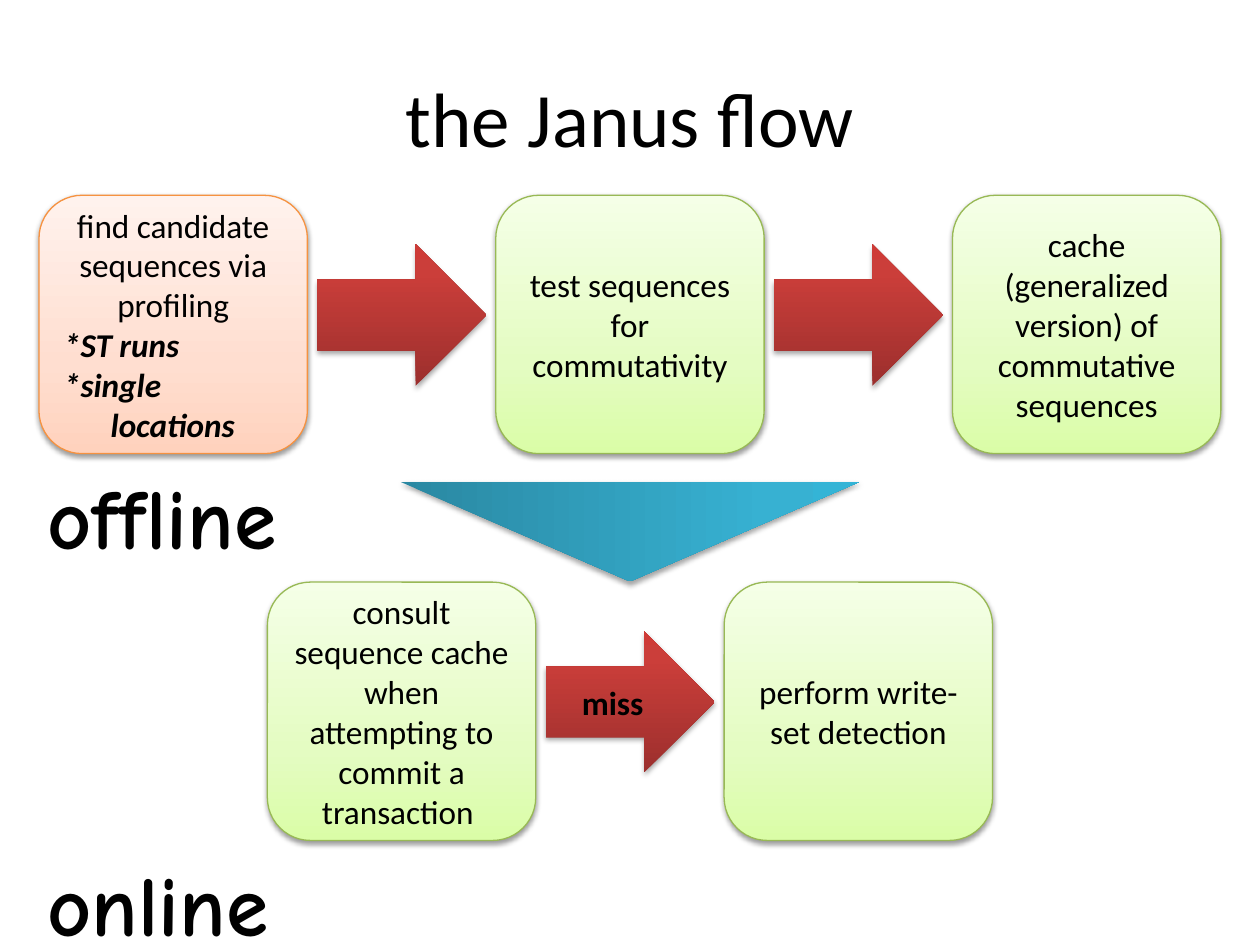
import dataclasses
import typing

import lxml.etree
import pptx
import pptx.dml.color
import pptx.enum.shapes
import pptx.enum.text
import pptx.oxml.ns
import pptx.util

RGB = pptx.dml.color.RGBColor
KIND = pptx.enum.shapes.MSO_SHAPE
ALIGN = pptx.enum.text.PP_ALIGN
ANCHOR = pptx.enum.text.MSO_ANCHOR
qn = pptx.oxml.ns.qn

BLACK = RGB(0x00, 0x00, 0x00)
LEAF = RGB(0x98, 0xB9, 0x55)
ORANGE = RGB(0xF6, 0x92, 0x40)

WIDE, HIGH = 10, 7.5
LEFT, STEP = 0.31, 1.8125  # grid of half-steps across
TOP, DROP = 1.55, 3.07  # offline row, then online row
BOX_W, BOX_H = 2.13, 2.05
HEAD_W, HEAD_H = 1.34, 1.12
SANS, HAND = "Calibri", "Comic Neue"


@dataclasses.dataclass(frozen=True)
class Look:
    stops: tuple[tuple[int, RGB], ...]  # percent from the bottom up
    line: typing.Optional[RGB] = None
    shade: int = 35  # shadow opacity in percent
    drop: float = 1.8  # shadow distance in points


@dataclasses.dataclass(frozen=True)
class Box:
    col: int
    row: int
    text: str
    look: Look
    notes: tuple[str, ...] = ()


@dataclasses.dataclass(frozen=True)
class Arrow:
    col: int
    row: int
    text: str = ""


GREEN = Look(((0, RGB(0xDA, 0xFD, 0xA7)), (35, RGB(0xE4, 0xFC, 0xC2)),
              (100, RGB(0xF5, 0xFF, 0xE7))), LEAF, 38, 1.6)
PEACH = Look(((0, RGB(0xFF, 0xD2, 0xBD)), (35, RGB(0xFF, 0xDE, 0xD0)),
              (100, RGB(0xFF, 0xF2, 0xED))), ORANGE, 38, 1.6)
RED = Look(((0, RGB(0x9C, 0x2F, 0x2D)), (80, RGB(0xCB, 0x3E, 0x3A)),
            (100, RGB(0xCE, 0x3B, 0x37))))
TEAL = Look(((0, RGB(0x2A, 0x88, 0xA2)), (80, RGB(0x37, 0xB1, 0xD2)),
             (100, RGB(0x34, 0xB4, 0xD6))))

BOXES = (
    Box(0, 0, "find candidate sequences via profiling", PEACH,
        ("*ST runs", "*single locations")),
    Box(2, 0, "test sequences for commutativity", GREEN),
    Box(4, 0, "cache (generalized version) of commutative sequences", GREEN),
    Box(1, 1, "consult sequence cache when attempting to commit a transaction ",
        GREEN),
    Box(3, 1, "perform write-set detection", GREEN),
)
ARROWS = (Arrow(0, 0), Arrow(2, 0), Arrow(1, 1, "miss"))
LABELS = ("offline", "online")


def inch(*sizes: float) -> list[int]:
    return [pptx.util.Inches(size) for size in sizes]


def add_tag(host, tag: str, **marks):
    return lxml.etree.SubElement(
        host, qn(tag), {key: str(mark) for key, mark in marks.items()})


def add_tint(host, tint: RGB):
    return add_tag(host, "a:srgbClr", val=tint)


def paint(shape, look: Look) -> None:
    """Give the shape its gradient, outline and soft shadow."""
    shape.fill.gradient()
    shape.fill.gradient_angle = 90
    stops = shape._element.spPr.find(".//" + qn("a:gsLst"))
    for stop in list(stops):
        stops.remove(stop)
    for share, tint in look.stops:
        add_tint(add_tag(stops, "a:gs", pos=share * 1000), tint)

    if look.line is None:
        shape.line.fill.background()
    else:
        shape.line.color.rgb = look.line
        shape.line.width = pptx.util.Pt(0.75)

    shape.shadow.inherit = False
    glow = add_tag(shape._element.spPr.find(qn("a:effectLst")), "a:outerShdw",
                   blurRad=pptx.util.Pt(3.1), dist=pptx.util.Pt(look.drop),
                   dir=90 * 60000, rotWithShape=0)
    add_tag(add_tint(glow, BLACK), "a:alpha", val=look.shade * 1000)


def style(para, size: float, face: str = SANS, bold: bool = False,
          slant: bool = False, align=ALIGN.CENTER) -> None:
    para.alignment = align
    for run in para.runs:
        font = run.font
        font.size, font.name = pptx.util.Pt(size), face
        font.bold, font.italic = bold, slant
        font.color.rgb = BLACK


def add_form(slide, kind, place: tuple[float, ...], look: Look):
    shape = slide.shapes.add_shape(kind, *inch(*place))
    paint(shape, look)
    shape.text_frame.word_wrap = True
    shape.text_frame.vertical_anchor = ANCHOR.MIDDLE
    return shape


def draw_box(slide, box: Box) -> None:
    place = (LEFT + box.col * STEP, TOP + box.row * DROP, BOX_W, BOX_H)
    frame = add_form(slide, KIND.ROUNDED_RECTANGLE, place, box.look).text_frame
    frame.text = box.text
    style(frame.paragraphs[0], 19)
    for note in box.notes:
        para = frame.add_paragraph()
        para.text = note
        style(para, 19, bold=True, slant=True, align=ALIGN.LEFT)
        hang = pptx.util.Inches(0.37)
        props = para._p.get_or_add_pPr()
        props.set("marL", str(hang))
        props.set("indent", str(-hang))


def draw_arrow(slide, arrow: Arrow) -> None:
    place = (LEFT + arrow.col * STEP + 2.21, TOP + arrow.row * DROP + 0.39,
             HEAD_W, HEAD_H)
    shape = add_form(slide, KIND.RIGHT_ARROW, place, RED)
    if arrow.text:
        shape.text_frame.text = arrow.text
        style(shape.text_frame.paragraphs[0], 19, bold=True)


def draw_wedge(slide) -> None:
    """Point from the offline row down to the online row."""
    thick, span = 0.79, 3.64
    place = ((WIDE - thick) / 2, 4.22 - span / 2, thick, span)
    wedge = add_form(slide, KIND.RIGHT_ARROW, place, TEAL)
    wedge.rotation = 90
    wedge.adjustments[0], wedge.adjustments[1] = 0.72, 1


def draw_text(slide, text: str, place: tuple[float, ...], **looks):
    frame = slide.shapes.add_textbox(*inch(*place)).text_frame
    frame.word_wrap = True
    frame.text = text
    style(frame.paragraphs[0], **looks)
    return frame


def main() -> None:
    deck = pptx.Presentation()
    deck.slide_width, deck.slide_height = inch(WIDE, HIGH)
    slide = deck.slides.add_slide(deck.slide_layouts[6])

    title = draw_text(slide, "the Janus flow",
                      (0.05 * WIDE, 0.04 * HIGH, 0.9 * WIDE, 1.25), size=44)
    title.vertical_anchor = ANCHOR.MIDDLE
    for box in BOXES:
        draw_box(slide, box)
    for arrow in ARROWS:
        draw_arrow(slide, arrow)
    draw_wedge(slide)
    for row, label in enumerate(LABELS):
        frame = draw_text(slide, label, (0.28, TOP + 2.08 + row * DROP, 2.99, 0.93),
                          size=49, face=HAND, bold=True, align=ALIGN.LEFT)
        frame.auto_size = pptx.enum.text.MSO_AUTO_SIZE.SHAPE_TO_FIT_TEXT

    deck.save("out.pptx")


if __name__ == "__main__":
    main()
